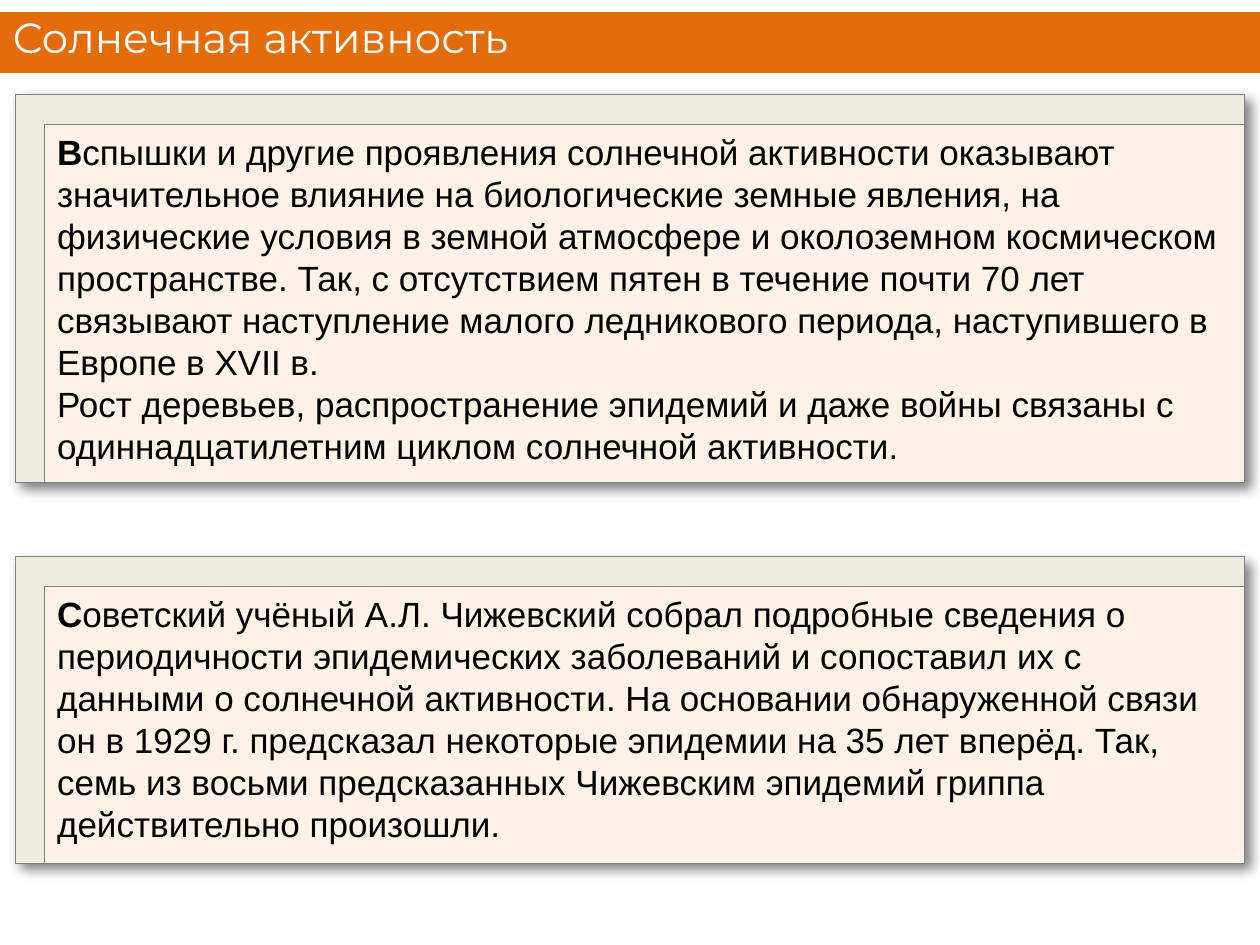
from lxml.etree import SubElement
from pptx import Presentation
from pptx.dml.color import RGBColor
from pptx.enum.shapes import MSO_CONNECTOR, MSO_SHAPE
from pptx.enum.text import MSO_ANCHOR, PP_ALIGN
from pptx.oxml.ns import qn
from pptx.util import Inches, Pt

# Content: each card is (top, height, paragraphs); the first letter is bold
TITLE = "Солнечная активность"
CARDS = [
    (0.75, 3.08, [
        "Вспышки и другие проявления солнечной активности оказывают значительное "
        "влияние на биологические земные явления, на физические условия в земной "
        "атмосфере и околоземном космическом пространстве. Так, с отсутствием пятен "
        "в течение почти 70 лет связывают наступление малого ледникового периода, "
        "наступившего в Европе в XVII в.",
        "Рост деревьев, распространение эпидемий и даже войны связаны с "
        "одиннадцатилетним циклом солнечной активности.",
    ]),
    (4.42, 2.43, [
        "Советский учёный А.Л. Чижевский собрал подробные сведения о периодичности "
        "эпидемических заболеваний и сопоставил их с данными о солнечной активности. "
        "На основании обнаруженной связи он в 1929 г. предсказал некоторые эпидемии "
        "на 35 лет вперёд. Так, семь из восьми предсказанных Чижевским эпидемий "
        "гриппа действительно произошли.",
    ]),
]

THEME = {
    "band": "E46C0A", "white": "FFFFFF", "frame": "EEECE1", "panel": "FEF1E6",
    "border": "808080", "text": "000000",
    "title_font": "Montserrat", "title_size": 24,
    "body_font": "Arial", "body_size": 20,
}
SLIDE_W, SLIDE_H = 10, 7.5
BAND_TOP, BAND_H = 0.08, 0.51
CARD_LEFT, CARD_W = 0.12, 9.76
INSET = 0.235  # frame strip showing above and left of the panel


def color(name):
    return RGBColor.from_string(THEME[name])


def add_rect(s, left, top, width, height, fill, border=None):
    sp = s.shapes.add_shape(MSO_SHAPE.RECTANGLE, Inches(left), Inches(top),
                            Inches(width), Inches(height))
    sp.shadow.inherit = False
    sp.fill.solid()
    sp.fill.fore_color.rgb = color(fill)
    if border:
        sp.line.color.rgb = color(border)
        sp.line.width = Pt(0.5)
    else:
        sp.line.fill.background()
    return sp


def add_shadow(sp):
    effects = sp._element.spPr.find(qn("a:effectLst"))
    shadow = SubElement(effects, qn("a:outerShdw"), blurRad=str(Pt(7)),
                        dist=str(Pt(5)), dir=str(45 * 60000), algn="tl",
                        rotWithShape="0")
    clr = SubElement(shadow, qn("a:srgbClr"), val=THEME["text"])
    SubElement(clr, qn("a:alpha"), val="50000")


def add_run(p, text, kind, fill, bold=False):
    r = p.add_run()
    r.text = text
    r.font.name = THEME[kind + "_font"]
    r.font.size = Pt(THEME[kind + "_size"])
    r.font.bold = bold
    r.font.color.rgb = color(fill)


def add_card(s, top, height, paragraphs):
    add_shadow(add_rect(s, CARD_LEFT, top, CARD_W, height, "frame", "border"))
    panel = add_rect(s, CARD_LEFT + INSET, top + INSET, CARD_W - INSET,
                     height - INSET, "panel", "border")
    tf = panel.text_frame
    tf.word_wrap = True
    tf.vertical_anchor = MSO_ANCHOR.TOP
    for i, text in enumerate(paragraphs):
        p = tf.paragraphs[0] if i == 0 else tf.add_paragraph()
        p.alignment = PP_ALIGN.LEFT
        if i == 0:
            add_run(p, text[0], "body", "text", bold=True)
            text = text[1:]
        add_run(p, text, "body", "text")


prs = Presentation()
prs.slide_width, prs.slide_height = Inches(SLIDE_W), Inches(SLIDE_H)
# Title Only layout supplies a real title placeholder
s = prs.slides.add_slide(prs.slide_layouts[5])

# Title band with white edges
add_rect(s, 0, BAND_TOP, SLIDE_W, BAND_H, "band")
for y in (BAND_TOP + BAND_H, BAND_TOP):
    edge = s.shapes.add_connector(MSO_CONNECTOR.STRAIGHT, 0, Inches(y),
                                  Inches(SLIDE_W), Inches(y))
    edge.line.color.rgb = color("white")
    edge.line.width = Pt(2)
    SubElement(edge._element.spPr, qn("a:effectLst"))

# Title, brought in front of the band
title = s.shapes.title
title.left, title.top = Inches(0), Inches(-0.04)
title.width, title.height = Inches(SLIDE_W), Inches(0.67)
title.text_frame.vertical_anchor = MSO_ANCHOR.MIDDLE
title.text_frame.paragraphs[0].alignment = PP_ALIGN.LEFT
add_run(title.text_frame.paragraphs[0], TITLE, "title", "white")
s.shapes._spTree.append(title._element)

# Text cards
for card in CARDS:
    add_card(s, *card)

prs.save("out.pptx")
